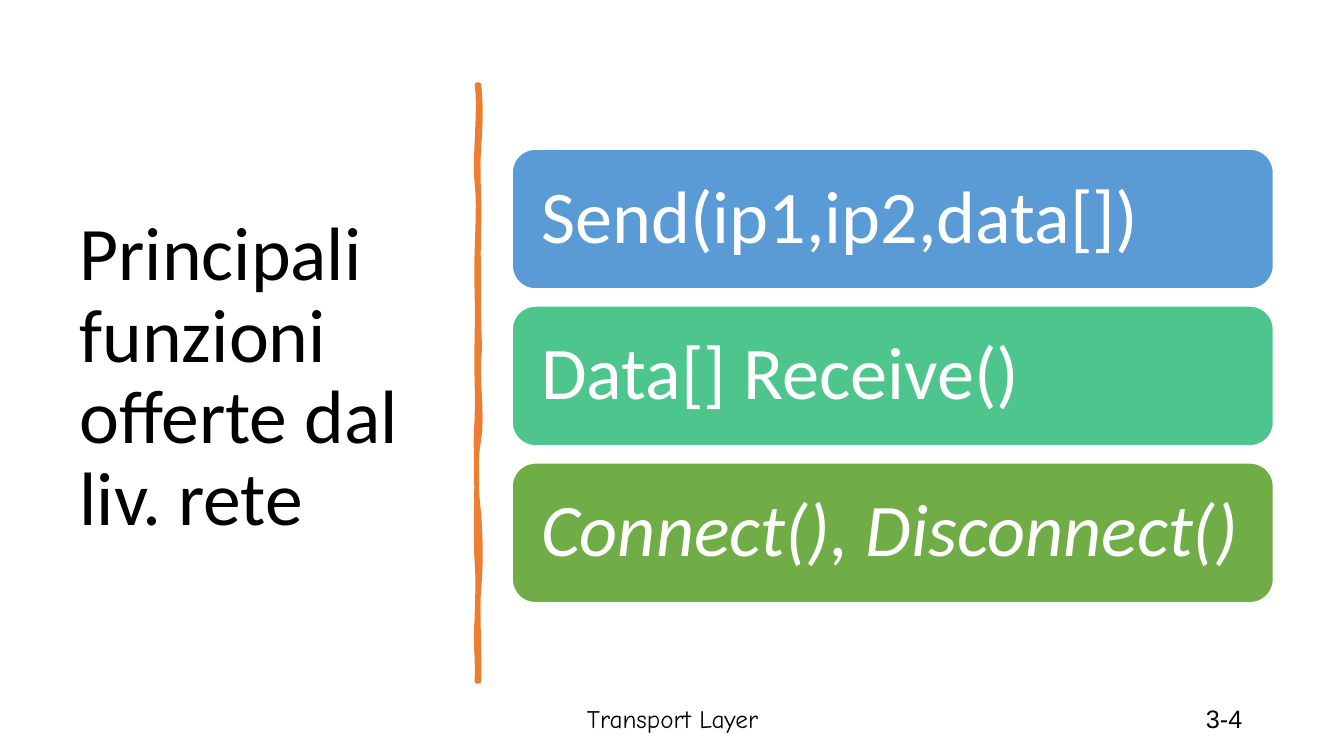
from pptx import Presentation
from pptx.dml.color import RGBColor
from pptx.enum.shapes import MSO_SHAPE
from pptx.enum.text import MSO_ANCHOR, PP_ALIGN
from pptx.util import Inches, Pt

ROUNDED = MSO_SHAPE.ROUNDED_RECTANGLE
MIDDLE = MSO_ANCHOR.MIDDLE
LEFT, CENTER, RIGHT = PP_ALIGN.LEFT, PP_ALIGN.CENTER, PP_ALIGN.RIGHT

BLACK = RGBColor(0x00, 0x00, 0x00)
WHITE = RGBColor(0xFF, 0xFF, 0xFF)
ORANGE = RGBColor(0xED, 0x7D, 0x31)
BLUE = RGBColor(0x5B, 0x9B, 0xD5)
TEAL = RGBColor(0x4D, 0xC5, 0x8D)
GREEN = RGBColor(0x70, 0xAD, 0x47)

FUNCTIONS = [
    ("Send(ip1,ip2,data[])", BLUE, False),
    ("Data[] Receive()", TEAL, False),
    ("Connect(), Disconnect()", GREEN, True),
]

STROKE_TOP, STROKE_BOTTOM = 0.84, 6.76
STROKE_LEFT, STROKE_RIGHT = 4.73, 4.75
RIGHT_CURVES = [
    (4.77, 1.02, 4.77, 1.19, 1.46), (4.73, 1.73, 4.76, 1.95, 2.26),
    (4.74, 2.57, 4.75, 2.62, 2.94), (4.74, 3.25, 4.77, 3.42, 3.56),
    (4.73, 3.7, 4.79, 4.14, 4.36), (4.71, 4.57, 4.72, 4.84, 5.1),
    (4.77, 5.36, 4.77, 5.64, 5.84), (4.73, 6.03, 4.76, 6.5, 6.76),
]
LEFT_CURVES = [
    (4.74, 6.46, 4.71, 6.44, 6.13), (4.74, 5.83, 4.74, 5.7, 5.57),
    (4.72, 5.44, 4.72, 4.95, 4.77), (4.73, 4.59, 4.71, 4.45, 4.15),
    (4.74, 3.86, 4.72, 3.73, 3.35), (4.74, 2.98, 4.72, 2.81, 2.5),
    (4.74, 2.18, 4.75, 2, 1.81), (4.7, 1.63, 4.77, 1.04, 0.84),
]


def write(shape, text, font, size, color, align=LEFT, italic=False):
    tf = shape.text_frame
    tf.word_wrap = True
    tf.vertical_anchor = MIDDLE
    tf.text = text
    p = tf.paragraphs[0]
    p.alignment = align
    p.line_spacing = 0.9
    f = p.runs[0].font
    f.name, f.size, f.italic = font, Pt(size), italic
    f.color.rgb = color


def add_text(s, box, text, font, size, align=LEFT):
    tb = s.shapes.add_textbox(*map(Inches, box))
    write(tb, text, font, size, BLACK, align)


def bezier(a, b, c, d, t):
    u = 1 - t
    return u**3 * a + 3 * u * u * t * b + 3 * u * t * t * c + t**3 * d


def trace_edge(x, y, curves, steps=8):
    points = [(Inches(x), Inches(y))]
    for x1, y1, x2, y2, end in curves:
        for i in range(1, steps + 1):
            t = i / steps
            points.append((Inches(bezier(x, x1, x2, x, t)),
                           Inches(bezier(y, y1, y2, end, t))))
        y = end
    return points


def add_divider(s):
    points = (trace_edge(STROKE_RIGHT, STROKE_TOP, RIGHT_CURVES)
              + trace_edge(STROKE_LEFT, STROKE_BOTTOM, LEFT_CURVES))
    fb = s.shapes.build_freeform(*points[0])
    fb.add_line_segments(points[1:], close=True)
    sp = fb.convert_to_shape()
    sp.shadow.inherit = False
    sp.fill.solid()
    sp.fill.fore_color.rgb = ORANGE
    sp.line.color.rgb = ORANGE
    sp.line.width = Pt(3.25)


def add_function_list(s, box, gap=0.17):
    left, top, width, height = box
    card_h = (height - gap * (len(FUNCTIONS) - 1)) / len(FUNCTIONS)
    for i, (text, color, italic) in enumerate(FUNCTIONS):
        card = (left, top + i * (card_h + gap), width, card_h)
        sp = s.shapes.add_shape(ROUNDED, *map(Inches, card))
        sp.shadow.inherit = False
        sp.fill.solid()
        sp.fill.fore_color.rgb = color
        sp.line.color.rgb = WHITE
        sp.line.width = Pt(1)
        write(sp, text, "Calibri", 53, WHITE, italic=italic)
        tf = sp.text_frame
        tf.margin_left = tf.margin_right = Inches(0.22)
        tf.margin_top = tf.margin_bottom = Inches(0.22)


def add_footer(s, top, height):
    add_text(s, (4.42, top, 4.5, height), "Transport Layer", "Comic Neue", 18, CENTER)
    add_text(s, (9.42, top, 3, height), "3-4", "Arial", 18, RIGHT)


def main():
    prs = Presentation()
    prs.slide_width, prs.slide_height = Inches(13.33), Inches(7.5)
    s = prs.slides.add_slide(prs.slide_layouts[6])
    add_text(s, (0.69, 0.7, 3.74, 6.11),
             "Principali funzioni offerte dal liv. rete", "Calibri", 54)
    add_divider(s)
    add_footer(s, 6.95, 0.4)
    add_function_list(s, (5.08, 1.48, 7.55, 4.5))
    prs.save("out.pptx")


if __name__ == "__main__":
    main()
